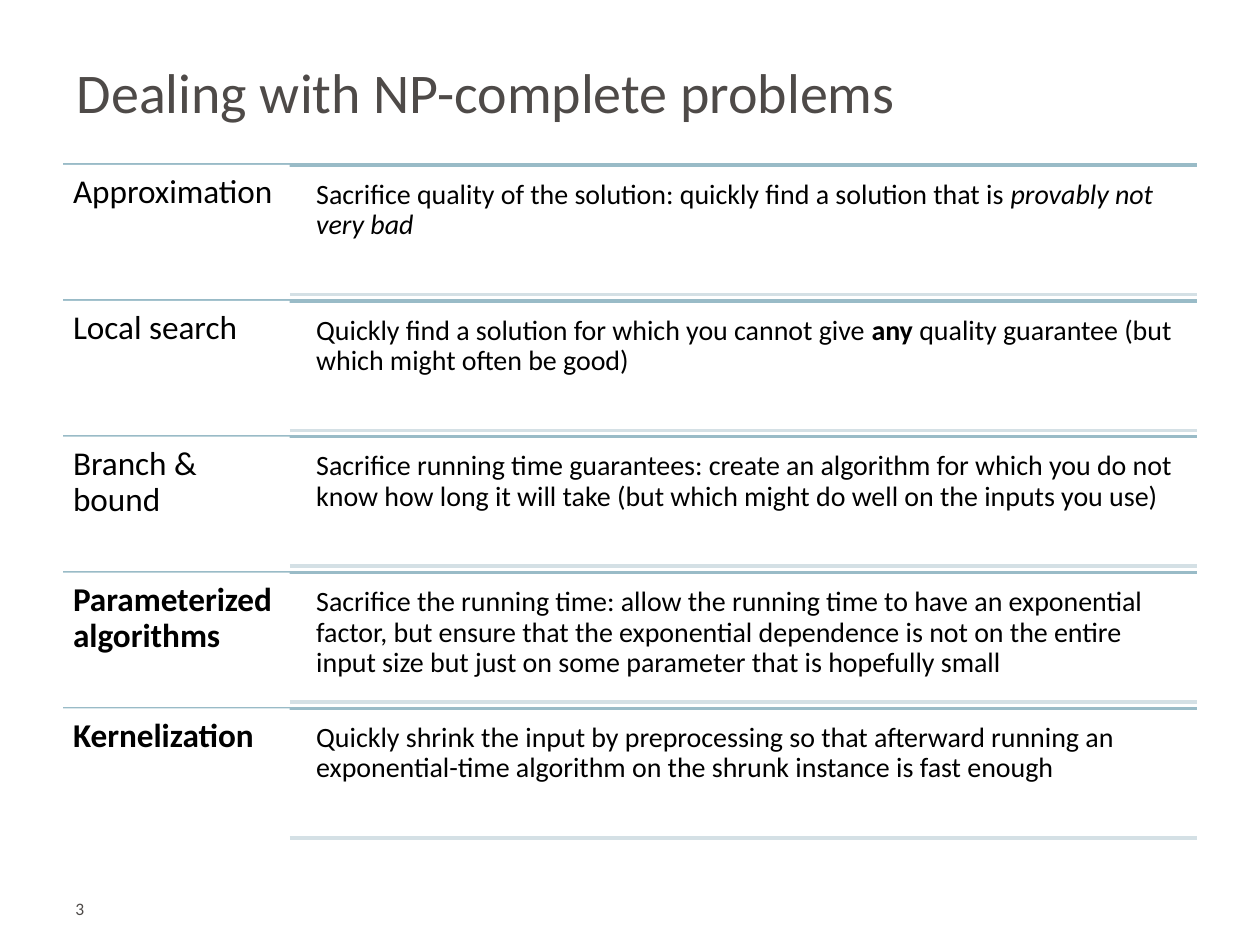
from pptx import Presentation
from pptx.dml.color import RGBColor
from pptx.enum.shapes import MSO_CONNECTOR, MSO_SHAPE
from pptx.enum.text import MSO_ANCHOR, PP_ALIGN
from pptx.oxml.ns import qn
from pptx.util import Inches, Pt
from lxml.etree import SubElement

TITLE = "Dealing with NP-complete problems"
PAGE_NUMBER = "3"
STRATEGIES = [
    ("Approximation", False, [
        ("Sacrifice quality of the solution: quickly find a solution that is ", ""),
        ("provably not very bad", "italic")]),
    ("Local search", False, [
        ("Quickly find a solution for which you cannot give ", ""),
        ("any ", "bold"),
        ("quality guarantee (but which might often be good)", "")]),
    ("Branch & bound", False, [
        ("Sacrifice running time guarantees: create an algorithm for which you do not know "
         "how long it will take (but which might do well on the inputs you use)", "")]),
    ("Parameterized algorithms", True, [
        ("Sacrifice the running time: allow the running time to have an exponential factor, "
         "but ensure that the exponential dependence is not on the entire input size "
         "but just on some parameter that is hopefully small", "")]),
    ("Kernelization", True, [
        ("Quickly shrink the input by preprocessing so that afterward running an "
         "exponential-time algorithm on the shrunk instance is fast enough", "")]),
]
THEME = {
    "font": "Calibri",
    "heading": RGBColor(0x4E, 0x4A, 0x48),
    "text": RGBColor(0, 0, 0),
    "paper": RGBColor(255, 255, 255),
    "rule": RGBColor(0x99, 0xBB, 0xC7),
    "light_rule": RGBColor(0xD4, 0xE0, 0xE5),
    "title_size": 32, "name_size": 19, "detail_size": 16, "page_size": 10,
    "rule_width": 2,
}
LEFT, RIGHT = 0.5, 9.5
NAME_WIDTH = 1.8
DETAIL_LEFT = 2.44
ROWS_TOP, ROWS_BOTTOM = 1.31, 6.7
ROW_HEIGHT = (ROWS_BOTTOM - ROWS_TOP) / len(STRATEGIES)
DETAIL_GAP = 0.05


def style_run(run, size, color, bold=False, italic=False):
    run.font.name = THEME["font"]
    run.font.size = Pt(size)
    run.font.color.rgb = color
    run.font.bold = bold
    run.font.italic = italic


def set_margins(text_frame, left, top, right, bottom):
    text_frame.margin_left, text_frame.margin_top = Inches(left), Inches(top)
    text_frame.margin_right, text_frame.margin_bottom = Inches(right), Inches(bottom)


def add_rule(slide, left, top, color):
    rule = slide.shapes.add_connector(
        MSO_CONNECTOR.STRAIGHT, Inches(left), Inches(top), Inches(RIGHT), Inches(top))
    rule.line.color.rgb = color
    rule.line.width = Pt(THEME["rule_width"])
    SubElement(rule._element.spPr, qn("a:effectLst"))


def add_cell(slide, left, top, width, height, margin, runs, size):
    cell = slide.shapes.add_shape(
        MSO_SHAPE.RECTANGLE, Inches(left), Inches(top), Inches(width), Inches(height))
    cell.shadow.inherit = False
    cell.fill.solid()
    cell.fill.fore_color.rgb = THEME["paper"]
    cell.line.fill.background()
    text_frame = cell.text_frame
    text_frame.word_wrap = True
    text_frame.vertical_anchor = MSO_ANCHOR.TOP
    set_margins(text_frame, margin, margin, margin, margin)
    paragraph = text_frame.paragraphs[0]
    paragraph.alignment = PP_ALIGN.LEFT
    paragraph.line_spacing = 0.9
    for text, emphasis in runs:
        run = paragraph.add_run()
        run.text = text
        style_run(run, size, THEME["text"], emphasis == "bold", emphasis == "italic")


def add_title(slide):
    title = slide.shapes.title
    title.left, title.top = Inches(0.51), Inches(0.38)
    title.width, title.height = Inches(9), Inches(0.69)
    title.text_frame.text = TITLE
    title.text_frame.vertical_anchor = MSO_ANCHOR.MIDDLE
    paragraph = title.text_frame.paragraphs[0]
    paragraph.alignment = PP_ALIGN.LEFT
    style_run(paragraph.runs[0], THEME["title_size"], THEME["heading"])


def add_strategy(slide, top, name, is_bold, detail):
    add_rule(slide, LEFT, top, THEME["rule"])
    add_cell(slide, LEFT, top, NAME_WIDTH, ROW_HEIGHT, 0.08,
             [(name, "bold" if is_bold else "")], THEME["name_size"])
    detail_height = ROW_HEIGHT - 2 * DETAIL_GAP
    add_cell(slide, DETAIL_LEFT, top + DETAIL_GAP, RIGHT - DETAIL_LEFT, detail_height,
             0.07, detail, THEME["detail_size"])
    add_rule(slide, LEFT + NAME_WIDTH, top + DETAIL_GAP + detail_height, THEME["light_rule"])


def add_page_number(slide):
    box = slide.shapes.add_textbox(Inches(LEFT), Inches(7.13), Inches(2.14), Inches(0.3))
    box.fill.solid()
    box.fill.fore_color.rgb = THEME["paper"]
    box.text_frame.word_wrap = True
    set_margins(box.text_frame, 0.1, 0, 0.1, 0.05)
    box.text_frame.text = PAGE_NUMBER
    style_run(box.text_frame.paragraphs[0].runs[0], THEME["page_size"], THEME["heading"])


def main():
    presentation = Presentation()
    presentation.slide_width, presentation.slide_height = Inches(10), Inches(7.5)
    slide = presentation.slides.add_slide(presentation.slide_layouts[5])
    add_title(slide)
    for index, strategy in enumerate(STRATEGIES):
        add_strategy(slide, ROWS_TOP + index * ROW_HEIGHT, *strategy)
    add_page_number(slide)
    presentation.save("out.pptx")


if __name__ == "__main__":
    main()
